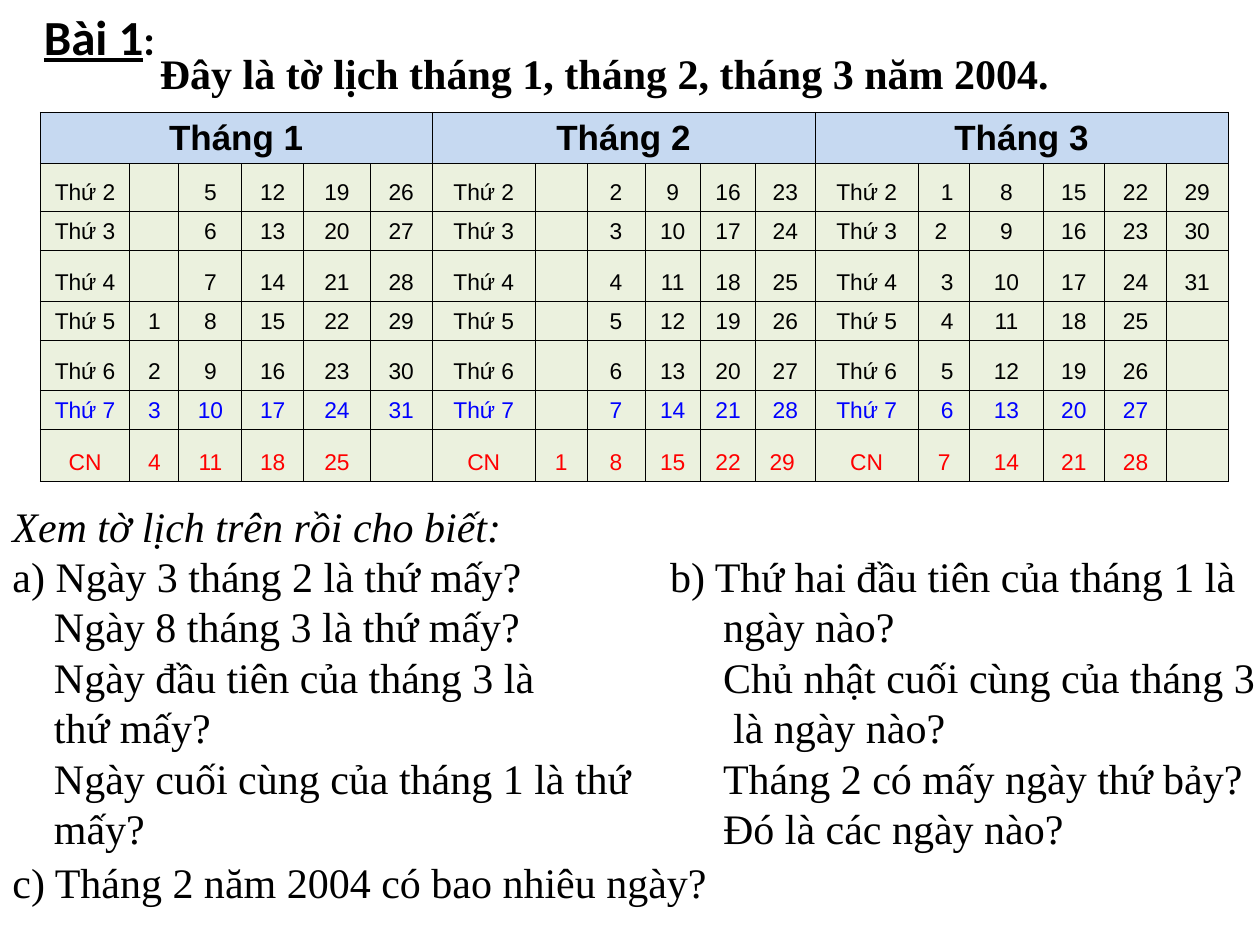
from lxml import etree
from pptx import Presentation
from pptx.dml.color import RGBColor
from pptx.enum import text
from pptx.oxml import ns
from pptx.util import Inches, Pt

BLACK = RGBColor(0, 0, 0)
BLUE = RGBColor(0, 0, 255)
RED = RGBColor(255, 0, 0)
HEADER_FILL = RGBColor(0xC6, 0xD9, 0xF1)
DAY_FILL = RGBColor(0xEB, 0xF1, 0xDE)
SERIF = "Times New Roman"

WEEKDAYS = [("Thứ 2", BLACK), ("Thứ 3", BLACK), ("Thứ 4", BLACK), ("Thứ 5", BLACK),
            ("Thứ 6", BLACK), ("Thứ 7", BLUE), ("CN", RED)]
MONTHS = [
    {"title": "Tháng 1", "first_weekday": 3, "days": 31, "spaced": {}},
    {"title": "Tháng 2", "first_weekday": 6, "days": 29, "spaced": {29: "29 "}},
    {"title": "Tháng 3", "first_weekday": 0, "days": 31,
     "spaced": {1: " 1", 2: "2 ", 3: " 3", 4: " 4", 5: " 5", 6: " 6"}},
]
WEEKS = 5
MONTH_COLUMNS = WEEKS + 1
COLUMN_WIDTHS = [0.71, 0.39, 0.5, 0.49, 0.53, 0.49,
                 0.82, 0.41, 0.46, 0.44, 0.44, 0.47,
                 0.82, 0.41, 0.58, 0.49, 0.49, 0.49]
ROW_HEIGHTS = [0.41, 0.38, 0.31, 0.4, 0.31, 0.4, 0.31, 0.41]

QUESTIONS_A = [
    ("Xem tờ lịch trên rồi cho biết:", 0),
    ("a) Ngày 3 tháng 2 là thứ mấy?", 0),
    ("Ngày 8 tháng 3 là thứ mấy?", 0.33),
    ("Ngày đầu tiên của tháng 3 là", 0.33),
    ("thứ mấy?", 0.33),
    ("Ngày cuối cùng của tháng 1 là thứ", 0.33),
    ("mấy?", 0.33),
]
QUESTIONS_B = [
    ("b) Thứ hai đầu tiên của tháng 1 là", 0),
    ("ngày nào?", 0.42),
    ("Chủ nhật cuối cùng của tháng 3", 0.42),
    ("là ngày nào?", 0.5),
    ("Tháng 2 có mấy ngày thứ bảy?", 0.42),
    ("Đó là các ngày nào?", 0.42),
]
QUESTION_C = [("c) Tháng 2 năm 2004 có bao nhiêu ngày?", 0)]
INTRO = [("Đây là tờ lịch tháng 1, tháng 2, tháng 3 năm 2004.", 0)]


def set_font(font, size, name, color=BLACK, bold=False):
    font.size = Pt(size)
    font.name = name
    font.color.rgb = color
    font.bold = bold


def add_lines(slide, box, lines, bold=False):
    frame = slide.shapes.add_textbox(*map(Inches, box)).text_frame
    frame.word_wrap = True
    for index, (line, indent) in enumerate(lines):
        paragraph = frame.add_paragraph() if index else frame.paragraphs[0]
        paragraph.text = line
        set_font(paragraph.font, 24, SERIF, bold=bold)
        if indent:
            paragraph._p.get_or_add_pPr().set("marL", str(Inches(indent)))
    return frame


def add_borders(cell):
    properties = cell._tc.get_or_add_tcPr()
    for position, side in enumerate(("lnL", "lnR", "lnT", "lnB")):
        border = etree.Element(ns.qn("a:" + side), w=str(Pt(0.5)))
        fill = etree.SubElement(border, ns.qn("a:solidFill"))
        etree.SubElement(fill, ns.qn("a:srgbClr"), val=str(BLACK))
        properties.insert(position, border)


def fill_cell(cell, label, size, color, fill, bold=False):
    cell.text = label
    cell.vertical_anchor = text.MSO_ANCHOR.BOTTOM
    cell.margin_left = cell.margin_right = Inches(0.05)
    cell.fill.solid()
    cell.fill.fore_color.rgb = fill
    add_borders(cell)
    paragraph = cell.text_frame.paragraphs[0]
    paragraph.alignment = text.PP_ALIGN.CENTER
    set_font(paragraph.font, size, "Arial", color, bold)
    paragraph._p.get_or_add_endParaRPr().set("sz", str(size * 100))


def add_calendar(slide):
    calendar = slide.shapes.add_table(
        len(ROW_HEIGHTS), len(COLUMN_WIDTHS), Inches(0.32), Inches(0.89),
        Inches(sum(COLUMN_WIDTHS)), Inches(sum(ROW_HEIGHTS))).table
    for column, width in zip(calendar.columns, COLUMN_WIDTHS):
        column.width = Inches(width)
    for row, height in zip(calendar.rows, ROW_HEIGHTS):
        row.height = Inches(height)
    for number, month in enumerate(MONTHS):
        start = number * MONTH_COLUMNS
        for column in range(start, start + MONTH_COLUMNS):
            title = month["title"] if column == start else ""
            fill_cell(calendar.cell(0, column), title, 20, BLACK, HEADER_FILL, True)
        calendar.cell(0, start).merge(calendar.cell(0, start + WEEKS))
        for weekday, (name, color) in enumerate(WEEKDAYS):
            fill_cell(calendar.cell(weekday + 1, start), name, 13, color, DAY_FILL)
            for week in range(WEEKS):
                day = 7 * week + weekday - month["first_weekday"] + 1
                label = month["spaced"].get(day, str(day)) if 1 <= day <= month["days"] else ""
                fill_cell(calendar.cell(weekday + 1, start + week + 1), label, 13, color, DAY_FILL)


def add_heading(slide):
    box = slide.shapes.add_textbox(Inches(0.25), Inches(0), Inches(1.75), Inches(0.57))
    box.text_frame.word_wrap = True
    paragraph = box.text_frame.paragraphs[0]
    for part, size, underline in (("Bài 1", 28, True), (":", 24, False)):
        run = paragraph.add_run()
        run.text = part
        set_font(run.font, size, "Calibri", bold=True)
        run.font.underline = underline


def main():
    deck = Presentation()
    deck.slide_width, deck.slide_height = Inches(10), Inches(7.5)
    slide = deck.slides.add_slide(deck.slide_layouts[6])
    add_calendar(slide)
    part_a = add_lines(slide, (0, 3.92, 5.42, 3.33), QUESTIONS_A)
    part_a.paragraphs[0].font.italic = True
    part_b = add_lines(slide, (5.22, 4, 4.95, 2.86), QUESTIONS_B)
    part_b.margin_top = Inches(0.37)
    add_lines(slide, (0, 6.75, 6.08, 0.5), QUESTION_C)
    add_heading(slide)
    add_lines(slide, (1.17, 0.33, 8.17, 0.5), INTRO, bold=True)
    deck.save("out.pptx")


if __name__ == "__main__":
    main()
